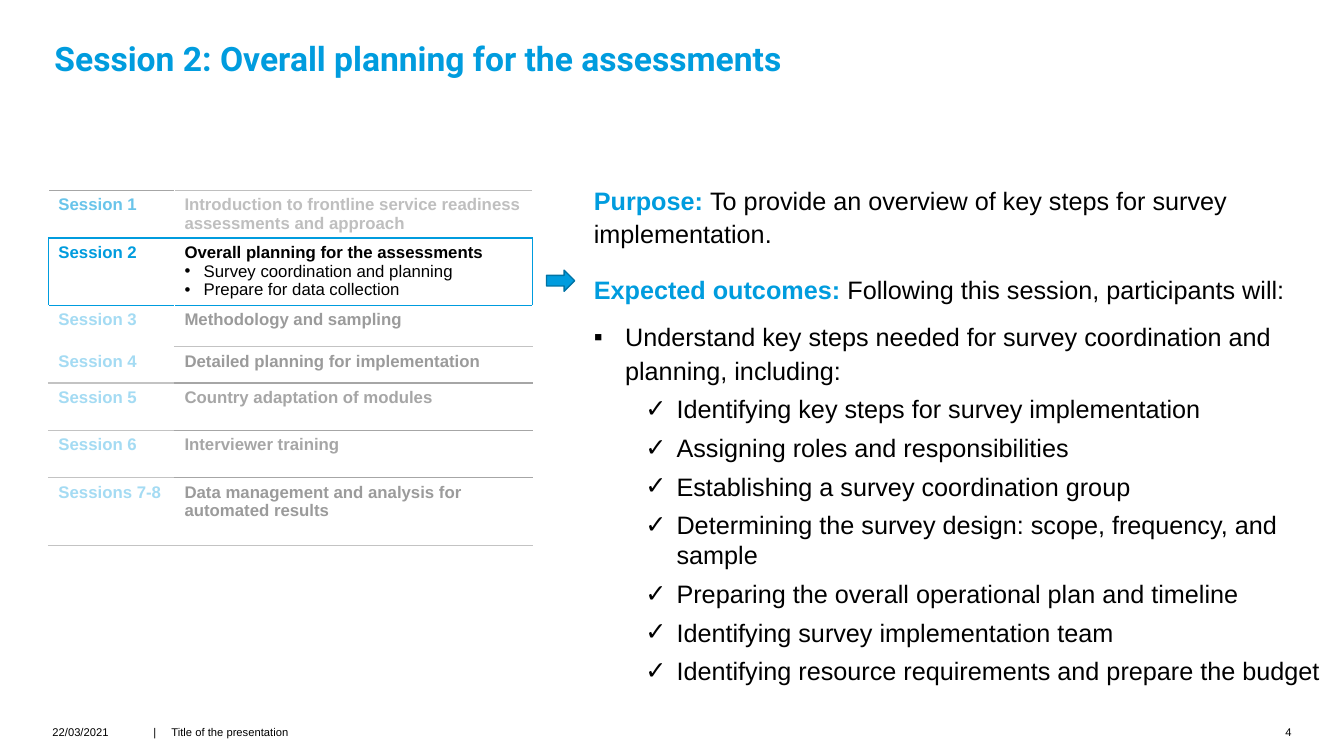
from pptx import Presentation
from pptx.dml.color import RGBColor
from pptx.enum.shapes import MSO_SHAPE as Shape
from pptx.enum.text import MSO_ANCHOR as Anchor, PP_ALIGN as Align
from pptx.oxml.ns import qn
from pptx.util import Inches, Pt
from lxml.etree import SubElement

COLORS = {
    "blue": "009CDE", "dark_blue": "0073A4", "mid_blue": "69C4EA",
    "pale_blue": "A4DBF3", "black": "000000", "white": "FFFFFF",
    "text_grey": "9B9B9B", "grey": "A6A6A6", "light_grey": "BFBFBF",
    "rule_grey": "C3C3C3",
}

# Name, name colour, heading, heading colour, sub-points, row height
SESSIONS = [
    ("Session 1", "mid_blue",
     "Introduction to frontline service readiness assessments and approach",
     "light_grey", [], 0.47),
    ("Session 2", "blue", "Overall planning for the assessments", "black",
     ["Survey coordination and planning", "Prepare for data collection"], 0.66),
    ("Session 3", "pale_blue", "Methodology and sampling", "text_grey", [], 0.41),
    ("Session 4", "pale_blue", "Detailed planning for implementation",
     "text_grey", [], 0.36),
    ("Session 5", "pale_blue", "Country adaptation of modules", "grey", [], 0.47),
    ("Session 6", "pale_blue", "Interviewer training", "grey", [], 0.47),
    ("Sessions 7-8", "pale_blue",
     "Data management and analysis for automated results", "text_grey", [], 0.67),
]

# Horizontal rules of each column, from the top edge to the bottom edge
RULES = [
    ["grey", "blue", "blue", None, "rule_grey", "rule_grey", "rule_grey", "rule_grey"],
    ["light_grey", "blue", "blue", "rule_grey", "grey", "grey", "grey", "rule_grey"],
]
CURRENT_ROW = 1

OUTCOMES = [
    "Identifying key steps for survey implementation",
    "Assigning roles and responsibilities",
    "Establishing a survey coordination group",
    "Determining the survey design: scope, frequency, and sample",
    "Preparing the overall operational plan and timeline",
    "Identifying survey implementation team",
    "Identifying resource requirements and prepare the budget",
]


def rgb(name):
    return RGBColor.from_string(COLORS[name])


def set_font(font, size, color, bold=False, face="Arial"):
    font.name, font.size, font.bold = face, Pt(size), bold
    font.color.rgb = rgb(color)


def add_bullet(paragraph, char, left, hanging):
    props = paragraph._p.get_or_add_pPr()
    props.set("marL", str(Inches(left)))
    props.set("indent", str(-Inches(hanging)))
    color = SubElement(props, qn("a:buClr"))
    SubElement(color, qn("a:srgbClr"), val=COLORS["black"])
    SubElement(props, qn("a:buFont"), typeface="Arial")
    SubElement(props, qn("a:buChar"), char=char)


def add_tab_stop(paragraph, position):
    tabs = SubElement(paragraph._p.get_or_add_pPr(), qn("a:tabLst"))
    SubElement(tabs, qn("a:tab"), pos=str(Inches(position)), algn="l")


def add_text_frame(slide, left, top, width, height, side=0.0):
    box = slide.shapes.add_textbox(
        Inches(left), Inches(top), Inches(width), Inches(height))
    frame = box.text_frame
    frame.word_wrap = True
    frame.margin_left = frame.margin_right = Inches(side)
    frame.margin_top = frame.margin_bottom = 0
    return frame


def add_title(slide, text):
    frame = add_text_frame(slide, 0.52, 0.39, 8.92, 0.39, 0.02)
    frame.vertical_anchor = Anchor.BOTTOM
    title = frame.paragraphs[0]
    title.text = text
    title.line_spacing = 0.9
    set_font(title.font, 24, "blue", True, "Roboto")


def add_footer(slide, left, width, text, align=Align.LEFT, tab=None):
    footer = add_text_frame(slide, left, 7.2, width, 0.2).paragraphs[0]
    footer.text = text
    footer.alignment = align
    if tab:
        add_tab_stop(footer, tab)
    set_font(footer.font, 8, "black")


def add_border(cell, side, color):
    line = SubElement(cell._tc.get_or_add_tcPr(), qn("a:ln" + side), w=str(Pt(1)))
    if color is None:
        SubElement(line, qn("a:noFill"))
    else:
        fill = SubElement(line, qn("a:solidFill"))
        SubElement(fill, qn("a:srgbClr"), val=COLORS[color])


def style_cell(cell, row, col):
    outer = "blue" if row == CURRENT_ROW else "white"
    inner = None if row == CURRENT_ROW else "white"
    add_border(cell, "L", inner if col else outer)
    add_border(cell, "R", outer if col else inner)
    add_border(cell, "T", RULES[col][row])
    add_border(cell, "B", RULES[col][row + 1])
    cell.fill.background()
    cell.margin_left = cell.margin_right = Inches(0.1)
    cell.margin_top, cell.margin_bottom = Inches(0.05), Inches(0.02)


def add_agenda(slide):
    height = sum(session[-1] for session in SESSIONS)
    agenda = slide.shapes.add_table(
        len(SESSIONS), 2, Inches(0.48), Inches(1.89), Inches(4.8), Inches(height)).table
    agenda.first_row = agenda.horz_banding = False
    agenda.columns[0].width, agenda.columns[1].width = Inches(1.25), Inches(3.55)
    for row, (name, name_color, heading, color, points, height) in enumerate(SESSIONS):
        agenda.rows[row].height = Inches(height)
        for col, (text, shade) in enumerate([(name, name_color), (heading, color)]):
            cell = agenda.cell(row, col)
            style_cell(cell, row, col)
            label = cell.text_frame.paragraphs[0]
            label.text = text
            set_font(label.font, 12, shade, True)
        for text in points:
            point = agenda.cell(row, 1).text_frame.add_paragraph()
            point.text = text
            add_bullet(point, "•", 0.19, 0.19)
            set_font(point.font, 12, color)


def add_lead(paragraph, label, text):
    for words, color, bold in [(label, "blue", True), (text, "black", False)]:
        run = paragraph.add_run()
        run.text = words
        set_font(run.font, 18, color, bold)


def add_goals(slide):
    frame = add_text_frame(slide, 5.87, 1.81, 7.29, 5.59, 0.02)

    purpose = frame.paragraphs[0]
    add_lead(purpose, "Purpose: ",
             "To provide an overview of key steps for survey implementation.")
    purpose.line_spacing, purpose.space_after = 1.1, Pt(6)

    expected = frame.add_paragraph()
    add_lead(expected, "Expected outcomes: ",
             "Following this session, participants will:")
    expected.line_spacing, expected.space_before = 1.1, Pt(10)

    aim = frame.add_paragraph()
    aim.text = "Understand key steps needed for survey coordination and planning, including:"
    aim.line_spacing, aim.space_before, aim.space_after = 1.1, Pt(10), Pt(6)
    add_bullet(aim, "▪", 0.31, 0.31)
    set_font(aim.font, 18, "black")

    for text in OUTCOMES:
        outcome = frame.add_paragraph()
        outcome.text = text
        outcome.level = 1
        outcome.space_after = Pt(6)
        add_bullet(outcome, "✓", 0.82, 0.31)
        set_font(outcome.font, 18, "black")


def add_pointer(slide):
    pointer = slide.shapes.add_shape(
        Shape.RIGHT_ARROW, Inches(5.42), Inches(2.68), Inches(0.28), Inches(0.21))
    pointer.shadow.inherit = False
    pointer.fill.solid()
    pointer.fill.fore_color.rgb = rgb("blue")
    pointer.line.color.rgb = rgb("dark_blue")
    pointer.line.width = Pt(1)


def main():
    deck = Presentation()
    deck.slide_width, deck.slide_height = Inches(13.33), Inches(7.5)
    slide = deck.slides.add_slide(deck.slide_layouts[6])

    add_title(slide, "Session 2: Overall planning for the assessments")
    add_agenda(slide)
    add_pointer(slide)
    add_goals(slide)

    # Footer line
    add_footer(slide, 0.52, 0.86, "22/03/2021")
    add_footer(slide, 1.52, 3.25, "|\tTitle of the presentation", tab=0.18)
    add_footer(slide, 12.49, 0.32, "4", Align.RIGHT)

    deck.save("out.pptx")


if __name__ == "__main__":
    main()
